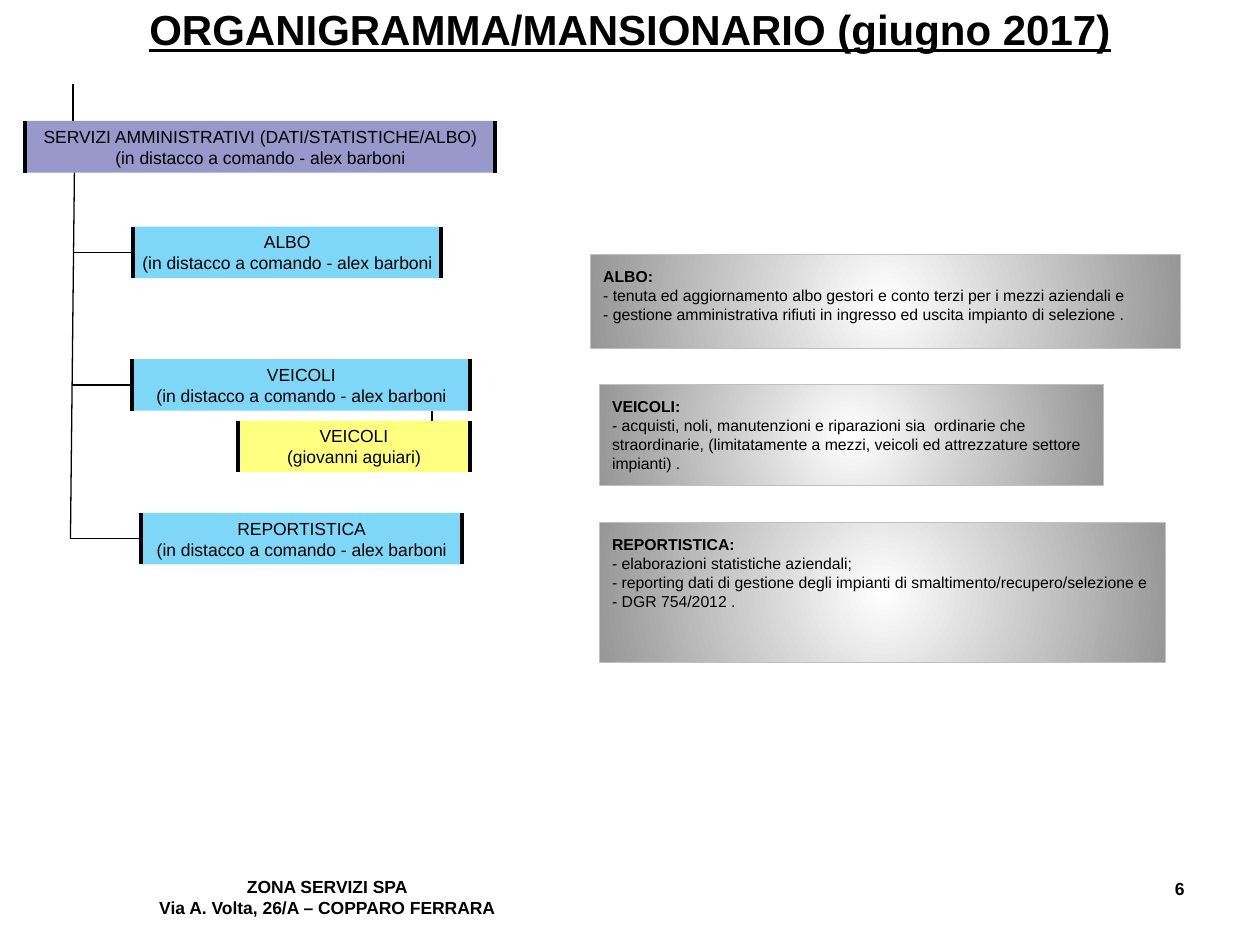
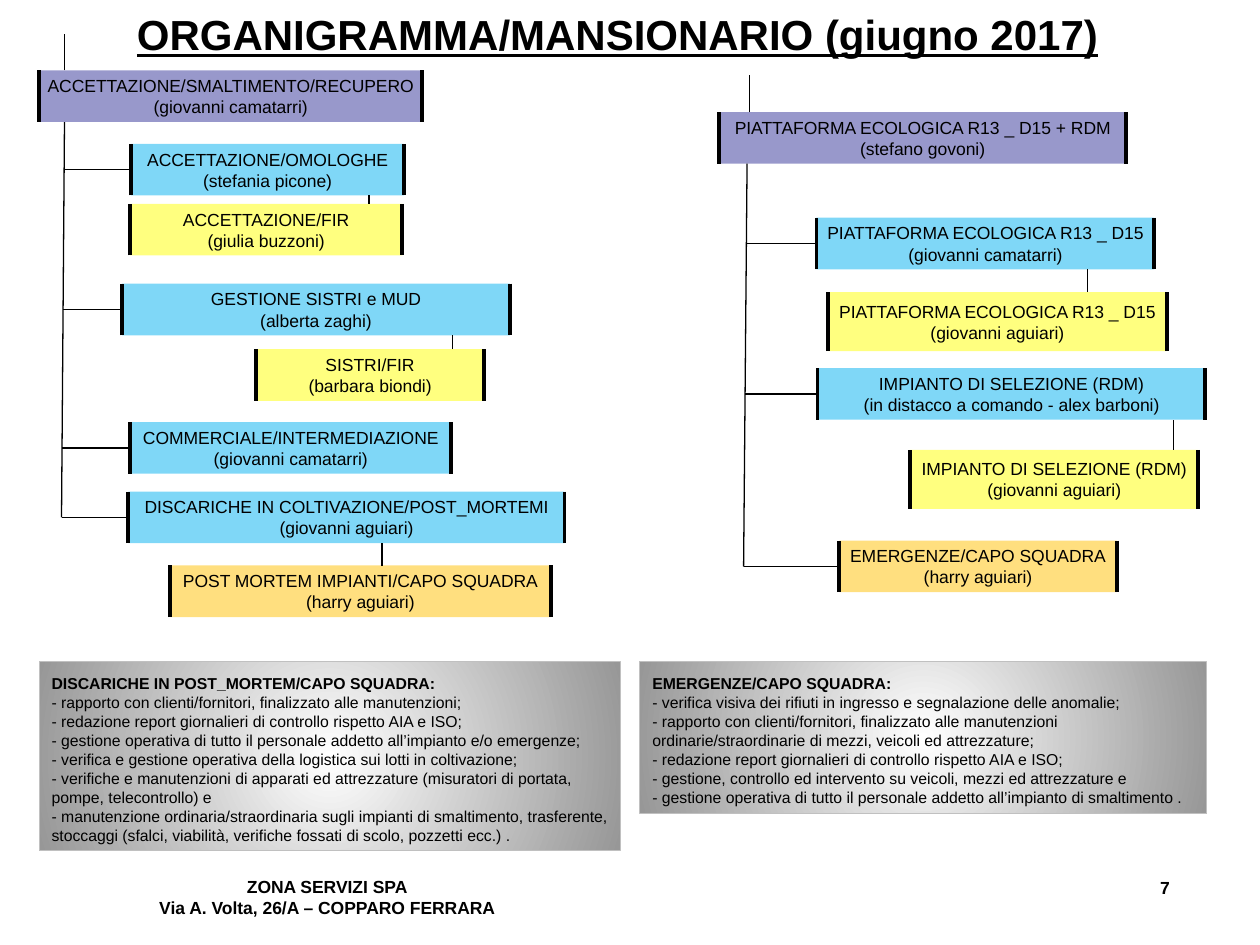
from dataclasses import dataclass

from pptx import Presentation
from pptx.dml.color import RGBColor
from pptx.enum.shapes import MSO_CONNECTOR, MSO_SHAPE
from pptx.enum.text import MSO_ANCHOR, PP_ALIGN
from pptx.oxml import parse_xml
from pptx.oxml.ns import nsdecls, qn
from pptx.oxml.xmlchemy import OxmlElement
from pptx.util import Cm, Pt

RECT, BRACKETS = MSO_SHAPE.RECTANGLE, MSO_SHAPE.DOUBLE_BRACKET
STRAIGHT = MSO_CONNECTOR.STRAIGHT
LEFT, CENTER, RIGHT = PP_ALIGN.LEFT, PP_ALIGN.CENTER, PP_ALIGN.RIGHT
TOP, MIDDLE = MSO_ANCHOR.TOP, MSO_ANCHOR.MIDDLE
LEFT_SIDE = 1


@dataclass(frozen=True)
class Theme:
    font: str = "Arial"
    ink: str = "000000"
    head: str = "333399"
    office: str = "00B0F0"
    staff: str = "FFFF00"
    squad: str = "FFC000"
    note_centre: str = "FFFFFF"
    note_rim: str = "979797"
    note_line: str = "C0C0C0"
    title_pt: float = 24
    box_pt: float = 10
    note_pt: float = 9
    bracket_pt: float = 2.25
    link_pt: float = 0.75
    note_line_pt: float = 0.5


T = Theme()

# Lengths are in centimetres.
BOX_H, TALL_BOX_H, STEM_H = 1.04, 1.19, 0.74
TITLE = "ORGANIGRAMMA/MANSIONARIO (giugno 2017)"
TITLE_SIZE = (19.6, 1.02)
FOOTER = ["ZONA SERVIZI SPA", "Via A. Volta, 26/A – COPPARO FERRARA"]
FOOTER_AT = (2.57, 17.53, 8.05, 1.09)
NUMBER_SIZE = (5.92, 1.09)

# A box is (title, person, left, top, width[, height]).
# A branch is (office box,) or (office box, child box, child colour, link x).
# A trunk runs from its x at the head to its x at the last branch.
BARBONI = "(in distacco a comando - alex barboni"
CAMATARRI, AGUIARI, HARRY = "(giovanni camatarri)", "(giovanni aguiari)", "(harry aguiari)"
PLATFORM, SORTING = "PIATTAFORMA ECOLOGICA R13 _ D15", "IMPIANTO DI SELEZIONE (RDM)"

ADMIN = {
    "head": ("SERVIZI AMMINISTRATIVI (DATI/STATISTICHE/ALBO)", BARBONI, 0.51, 2.44, 9.47),
    "stem": 1.47,
    "trunk": (1.5, 1.42),
    "branches": [
        (("ALBO", BARBONI, 2.69, 4.57, 6.2),),
        (("VEICOLI", BARBONI, 2.67, 7.24, 6.81),
         ("VEICOLI", AGUIARI, 4.8, 8.48, 4.67), T.staff, 8.71),
        (("REPORTISTICA", BARBONI, 2.84, 10.34, 6.48),),
    ],
}
INTAKE = {
    "head": ("ACCETTAZIONE/SMALTIMENTO/RECUPERO", CAMATARRI, 0.79, 1.42, 7.72),
    "stem": 1.3,
    "trunk": (1.3, 1.24),
    "branches": [
        (("ACCETTAZIONE/OMOLOGHE", "(stefania picone)", 2.64, 2.9, 5.51),
         ("ACCETTAZIONE/FIR", "(giulia buzzoni)", 2.62, 4.11, 5.49), T.staff, 7.44),
        (("GESTIONE SISTRI e MUD", "(alberta zaghi)", 2.46, 5.72, 7.82),
         ("SISTRI/FIR", "(barbara biondi)", 5.16, 7.04, 4.6), T.staff, 9.12),
        (("COMMERCIALE/INTERMEDIAZIONE", CAMATARRI, 2.62, 8.51, 6.48),),
        (("DISCARICHE IN COLTIVAZIONE/POST_MORTEMI", AGUIARI, 2.59, 9.91, 8.79),
         ("POST MORTEM IMPIANTI/CAPO SQUADRA", HARRY, 3.43, 11.4, 7.67), T.squad, 7.7),
    ],
}
ECOLOGY = {
    "head": (PLATFORM + " + RDM", "(stefano govoni)", 14.5, 2.26, 8.2),
    "stem": 15.11,
    "trunk": (15.06, 14.99),
    "branches": [
        ((PLATFORM, CAMATARRI, 16.46, 4.39, 6.81),
         (PLATFORM, AGUIARI, 16.69, 5.89, 6.83, TALL_BOX_H), T.staff, 21.92),
        ((SORTING, BARBONI + ")", 16.48, 7.42, 7.82),
         (SORTING, AGUIARI, 18.34, 9.07, 5.82, TALL_BOX_H), T.staff, 23.65),
        (("EMERGENZE/CAPO SQUADRA", HARRY, 16.92, 10.9, 5.59),),
    ],
    "last_colour": T.squad,
}

REPORT = "- redazione report giornalieri di controllo rispetto AIA e ISO;"
SLIDES = [
    {"title_at": (2.9, 0.08), "number": "6", "number_at": (18.21, 17.58), "charts": [ADMIN],
     "notes": [
         ((11.91, 5.13, 11.89, 1.9), [
             "ALBO:",
             "- tenuta ed aggiornamento albo gestori e conto terzi per i mezzi aziendali e",
             "- gestione amministrativa rifiuti in ingresso ed uscita impianto di selezione ."]),
         ((12.09, 7.75, 10.16, 2.03), [
             "VEICOLI:",
             "- acquisti, noli, manutenzioni e riparazioni sia  ordinarie che straordinarie, "
             "(limitatamente a mezzi, veicoli ed attrezzature settore impianti) ."]),
         ((12.09, 10.54, 11.4, 2.82), [
             "REPORTISTICA:",
             "- elaborazioni statistiche aziendali;",
             "- reporting dati di gestione degli impianti di smaltimento/recupero/selezione e",
             "- DGR 754/2012 ."]),
     ]},
    {"title_at": (2.65, 0.18), "number": "7", "number_at": (17.91, 17.55),
     "charts": [INTAKE, ECOLOGY],
     "notes": [
         ((0.79, 13.34, 11.71, 3.81), [
             "DISCARICHE IN POST_MORTEM/CAPO SQUADRA:",
             "- rapporto con clienti/fornitori, finalizzato alle manutenzioni;",
             REPORT,
             "- gestione operativa di tutto il personale addetto all’impianto e/o emergenze;",
             "- verifica e gestione operativa della logistica sui lotti in coltivazione;",
             "- verifiche e manutenzioni di apparati ed attrezzature (misuratori di portata, "
             "pompe, telecontrollo) e",
             "- manutenzione ordinaria/straordinaria sugli impianti di smaltimento, trasferente, "
             "stoccaggi (sfalci, viabilità, verifiche fossati di scolo, pozzetti ecc.) ."]),
         ((12.9, 13.34, 11.43, 3.07), [
             "EMERGENZE/CAPO SQUADRA:",
             "- verifica visiva dei rifiuti in ingresso e segnalazione delle anomalie;",
             "- rapporto con clienti/fornitori, finalizzato alle manutenzioni "
             "ordinarie/straordinarie di mezzi, veicoli ed attrezzature;",
             REPORT,
             "- gestione, controllo ed intervento su veicoli, mezzi ed attrezzature e",
             "- gestione operativa di tutto il personale addetto all’impianto di smaltimento ."]),
     ]},
]


def cms(*values):
    return [Cm(v) for v in values]


def write(tf, lines, size, align, bold_lines=0, underline=False):
    """Fill the frame, one paragraph a line; the first bold_lines are bold."""
    for i, line in enumerate(lines):
        p = tf.paragraphs[0] if i == 0 else tf.add_paragraph()
        p.alignment = align
        r = p.add_run()
        r.text = line
        r.font.color.rgb = RGBColor.from_string(T.ink)
        look = {"name": T.font, "size": Pt(size), "bold": i < bold_lines, "underline": underline}
        for key, value in look.items():
            setattr(r.font, key, value)


def set_frame(tf, anchor, wrap, inset_x, inset_y):
    look = {"vertical_anchor": anchor, "word_wrap": wrap,
            "margin_left": Cm(inset_x), "margin_right": Cm(inset_x),
            "margin_top": Cm(inset_y), "margin_bottom": Cm(inset_y)}
    for key, value in look.items():
        setattr(tf, key, value)


def set_line(line, colour, width):
    line.color.rgb = RGBColor.from_string(colour)
    line.width = Pt(width)


def add_label(s, at, lines, size, align, underline=False, inset=(0.25, 0.13)):
    tf = s.shapes.add_textbox(*cms(*at)).text_frame
    set_frame(tf, TOP, not underline, *inset)
    write(tf, lines, size, align, len(lines), underline)


def add_box(s, colour, box):
    title, person, left, top, width = box[:5]
    sp = s.shapes.add_shape(BRACKETS, *cms(left, top, width, height_of(box)))
    sp.adjustments[0] = 0
    sp.shadow.inherit = False
    sp.fill.solid()
    sp.fill.fore_color.rgb = RGBColor.from_string(colour)
    alpha = OxmlElement("a:alpha")
    alpha.set("val", "50000")
    sp.fill._xPr.find(qn("a:solidFill"))[0].append(alpha)
    set_line(sp.line, T.ink, T.bracket_pt)
    set_frame(sp.text_frame, MIDDLE, False, 0.1, 0.05)
    write(sp.text_frame, [title, person], T.box_pt, CENTER)
    return sp


def add_note(s, at, lines):
    sp = s.shapes.add_shape(RECT, *cms(*at))
    sp.shadow.inherit = False
    sp.fill.gradient()
    grad = sp.fill._xPr.find(qn("a:gradFill"))
    grad.getparent().replace(grad, parse_xml(
        f'<a:gradFill {nsdecls("a")} rotWithShape="1"><a:gsLst>'
        f'<a:gs pos="0"><a:srgbClr val="{T.note_centre}"/></a:gs>'
        f'<a:gs pos="100000"><a:srgbClr val="{T.note_rim}"/></a:gs></a:gsLst>'
        '<a:path path="circle"><a:fillToRect l="50000" t="50000" r="50000" b="50000"/></a:path>'
        '</a:gradFill>'))
    set_line(sp.line, T.note_line, T.note_line_pt)
    set_frame(sp.text_frame, TOP, True, 0.25, 0.25)
    write(sp.text_frame, lines, T.note_pt, LEFT, bold_lines=1)


def add_link(s, x1, y1, x2, y2):
    link = s.shapes.add_connector(STRAIGHT, *cms(x1, y1, x2, y2))
    set_line(link.line, T.ink, T.link_pt)
    link._element.spPr.append(OxmlElement("a:effectLst"))
    return link


def height_of(box):
    return box[5] if len(box) > 5 else BOX_H


def middle_of(box):
    return box[3] + height_of(box) / 2


def add_chart_tree(s, chart):
    """Draw head, trunk and branches; each branch meets the slanted trunk."""
    head, branches = chart["head"], chart["branches"]
    add_box(s, T.head, head)
    stem, head_top = chart["stem"], head[3]
    add_link(s, stem, head_top, stem, head_top - STEM_H)

    x1, x2 = chart["trunk"]
    y1, y2 = head_top + height_of(head), middle_of(branches[-1][0])
    add_link(s, x1, y1, x2, y2)

    for office, *child in branches:
        is_last = office is branches[-1][0]
        colour = chart.get("last_colour", T.office) if is_last else T.office
        sp = add_box(s, colour, office)
        y = middle_of(office)
        trunk_x = x1 + (x2 - x1) * (y - y1) / (y2 - y1)
        add_link(s, office[2], y, trunk_x, y).begin_connect(sp, LEFT_SIDE)
        if child:
            child_box, child_colour, link_x = child
            add_box(s, child_colour, child_box)
            add_link(s, link_x, child_box[3], link_x, office[3] + height_of(office))


def main():
    prs = Presentation()
    prs.slide_width, prs.slide_height = cms(25.4, 19.05)
    for page in SLIDES:
        s = prs.slides.add_slide(prs.slide_layouts[6])
        add_label(s, page["title_at"] + TITLE_SIZE, [TITLE], T.title_pt, CENTER,
                  underline=True, inset=(0, 0))
        for chart in page["charts"]:
            add_chart_tree(s, chart)
        for at, lines in page["notes"]:
            add_note(s, at, lines)
        add_label(s, FOOTER_AT, FOOTER, T.box_pt, CENTER)
        add_label(s, page["number_at"] + NUMBER_SIZE, [page["number"]], T.box_pt, RIGHT)
    prs.save("out.pptx")


if __name__ == "__main__":
    main()
